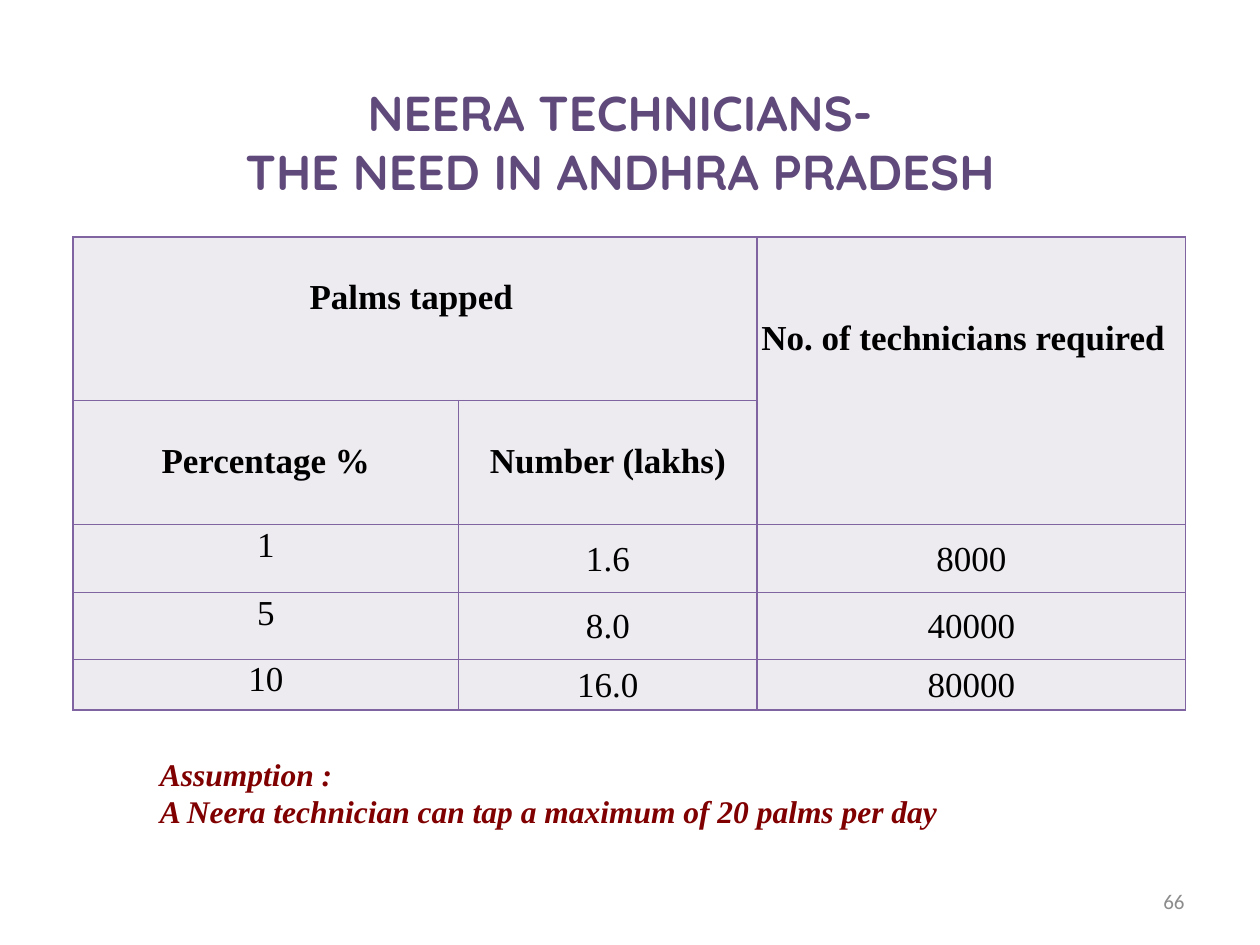
from lxml import etree
from pptx import Presentation
from pptx.dml.color import RGBColor
from pptx.enum.text import MSO_ANCHOR, PP_ALIGN
from pptx.oxml.ns import qn
from pptx.util import Inches, Pt

LEFT, CENTER, RIGHT = PP_ALIGN.LEFT, PP_ALIGN.CENTER, PP_ALIGN.RIGHT
TOP, MIDDLE = MSO_ANCHOR.TOP, MSO_ANCHOR.MIDDLE

PURPLE = RGBColor(0x60, 0x4A, 0x7B)
BORDER = RGBColor(0x80, 0x64, 0xA2)
CELL_FILL = RGBColor(0xED, 0xEA, 0xF0)
MAROON = RGBColor(0x80, 0x00, 0x00)
GRAY = RGBColor(0x8C, 0x8C, 0x8C)
BLACK = RGBColor(0x00, 0x00, 0x00)

# Content: paragraphs, position, alignment, anchor, font
TEXT_BOXES = [
    (["NEERA TECHNICIANS-\vTHE NEED IN ANDHRA PRADESH"],
     (0.42, 0.5, 9, 1.25), CENTER, MIDDLE,
     {"name": "Quicksand", "size": Pt(28), "bold": True}, PURPLE),
    (["Assumption :", "A Neera technician can tap a maximum of 20 palms per day"],
     (1.17, 5.94, 7.81, 0.71), LEFT, TOP,
     {"name": "Times New Roman", "size": Pt(18), "bold": True, "italic": True}, MAROON),
    (["66"], (7.17, 6.95, 2.33, 0.4), RIGHT, MIDDLE,
     {"name": "Calibri", "size": Pt(12)}, GRAY),
]
TABLE_BOX = (0.58, 1.88, 8.83, 3.75)
COLUMN_WIDTHS = [3.06, 2.37, 3.4]
ROW_HEIGHTS = [1.3, 0.98, 0.54, 0.53, 0.4]
ROWS = [
    ["Palms tapped", "", "No. of technicians required"],
    ["Percentage %", "Number (lakhs)", ""],
    ["1", "1.6", "8000"],
    ["5", "8.0", "40000"],
    ["10", "16.0", "80000"],
]
HEADER_ROWS = 2
MERGES = [((0, 0), (0, 1)), ((0, 2), (1, 2))]
MARGIN = 0.01
LINE_HEIGHT = 0.32
# Header cells start one text line down, the tall one two lines down
HEADER_LINES = {(0, 2): 2}
RIGHT_MARGINS = {(0, 0): 0.07, (0, 2): 0.14}


def set_all(target, values):
    for name, value in values.items():
        setattr(target, name, value)


def write(frame, lines, alignment, font, color):
    for index, line in enumerate(lines):
        paragraph = frame.add_paragraph() if index else frame.paragraphs[0]
        paragraph.text = line
        paragraph.alignment = alignment
        for run in paragraph.runs:
            set_all(run.font, font)
            run.font.color.rgb = color


def add_borders(cell):
    properties = cell._tc.get_or_add_tcPr()
    for side in ("lnL", "lnR", "lnT", "lnB"):
        line = etree.SubElement(properties, qn(f"a:{side}"), w=str(Pt(1)))
        fill = etree.SubElement(line, qn("a:solidFill"))
        etree.SubElement(fill, qn("a:srgbClr"), val=str(BORDER))


def format_cell(cell, row, column, text):
    header = row < HEADER_ROWS
    skipped_lines = HEADER_LINES.get((row, column), 1) if header else 0
    set_all(cell, {
        "margin_left": Inches(MARGIN),
        "margin_right": Inches(RIGHT_MARGINS.get((row, column), MARGIN)),
        "margin_top": Inches(MARGIN + skipped_lines * LINE_HEIGHT),
        "margin_bottom": 0,
        "vertical_anchor": TOP if header or column == 0 else MIDDLE,
    })
    add_borders(cell)
    cell.fill.solid()
    cell.fill.fore_color.rgb = CELL_FILL
    if text:
        font = {"name": "Times New Roman", "size": Pt(20), "bold": header}
        write(cell.text_frame, [text], CENTER, font, BLACK)


presentation = Presentation()
presentation.slide_width, presentation.slide_height = Inches(10), Inches(7.5)
slide = presentation.slides.add_slide(presentation.slide_layouts[6])

# Title, assumption and page number
for lines, box, alignment, anchor, font, color in TEXT_BOXES:
    frame = slide.shapes.add_textbox(*map(Inches, box)).text_frame
    set_all(frame, {"word_wrap": True, "vertical_anchor": anchor})
    write(frame, lines, alignment, font, color)

# Table of technicians needed
table = slide.shapes.add_table(
    len(ROWS), len(COLUMN_WIDTHS), *map(Inches, TABLE_BOX)).table
set_all(table, {"first_row": False, "horz_banding": False})
for column, width in zip(table.columns, COLUMN_WIDTHS):
    column.width = Inches(width)
for row, height in zip(table.rows, ROW_HEIGHTS):
    row.height = Inches(height)
for start, end in MERGES:
    table.cell(*start).merge(table.cell(*end))
for row, texts in enumerate(ROWS):
    for column, text in enumerate(texts):
        format_cell(table.cell(row, column), row, column, text)

presentation.save("out.pptx")
